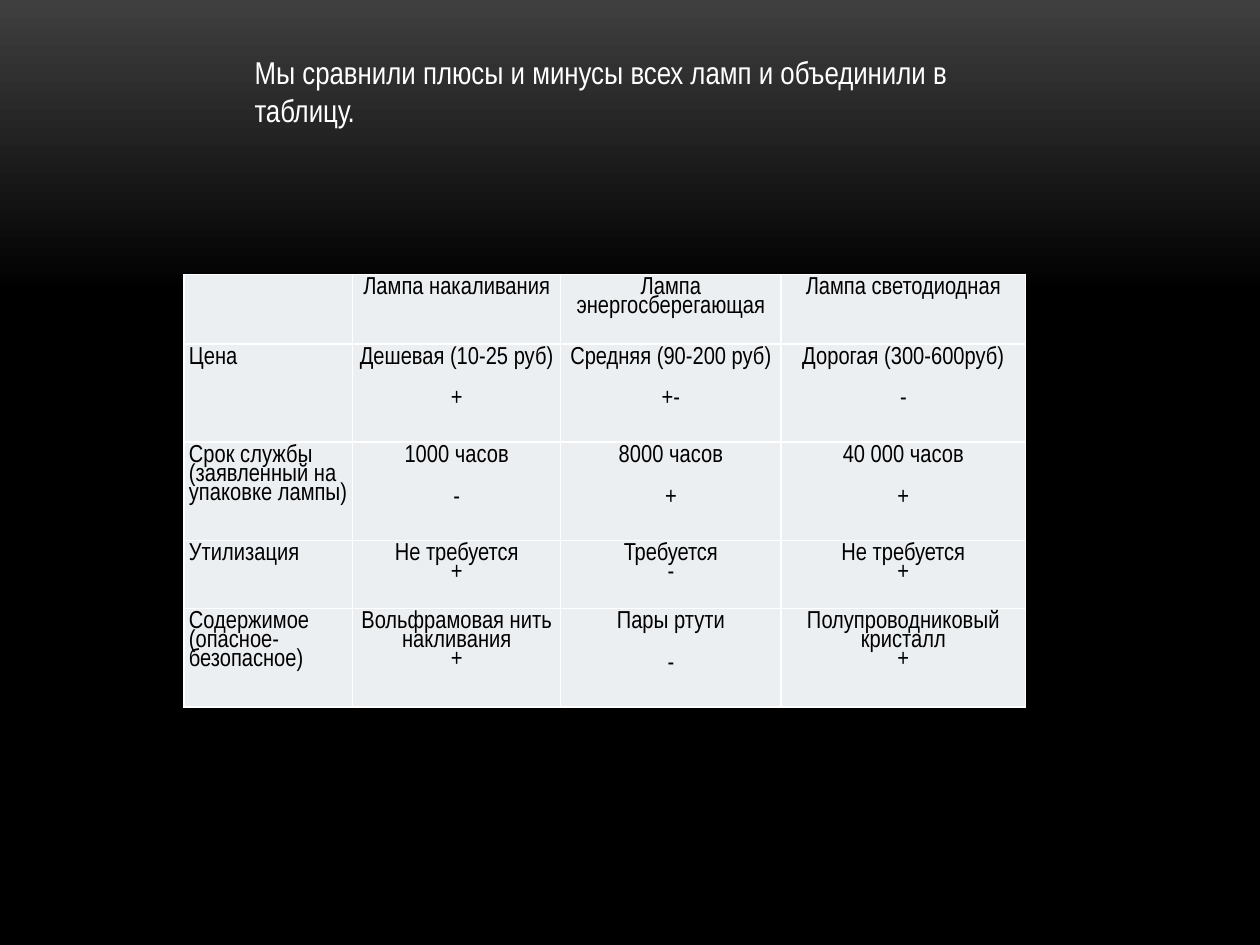
from pptx import Presentation
from pptx import util as u
from pptx.dml.color import RGBColor
from pptx.enum import text
from pptx.oxml import parse_xml
from pptx.oxml.ns import nsdecls

TITLE = "Мы сравнили плюсы и минусы всех ламп и объединили в таблицу."
HEADS = ["", "Лампа накаливания", "Лампа энергосберегающая", "Лампа светодиодная"]
ROWS = [
    (["Цена"], ["Дешевая (10-25 руб)", "+"],
     ["Средняя (90-200 руб)", "+-"], ["Дорогая (300-600руб)", "-"]),
    (["Срок службы", "(заявленный на упаковке лампы)"], ["1000 часов", "-"],
     ["8000 часов", "+"], ["40 000 часов", "+"]),
    (["Утилизация"], ["Не требуется", "+"],
     ["Требуется", "-"], ["Не требуется", "+"]),
    (["Содержимое", "(опасное-безопасное)"], ["Вольфрамовая нить накливания", "+"],
     ["Пары ртути", "-"], ["Полупроводниковый кристалл", "+"]),
]
GAPS = {(1, 1), (1, 2), (1, 3), (2, 1), (2, 2), (2, 3), (4, 2)}
WIDTHS = [1.34, 1.65, 1.75, 1.94]
HEIGHTS = [0.55, 0.78, 0.78, 0.54, 0.78]
THEME = {
    "font": "Arial Narrow", "title": 18, "cell": 14, "lead": 0.82, "gap": 13,
    "white": "FFFFFF", "black": "000000", "grey": "3F3F3F", "fill": "ECEFF1",
}


def tint(name):
    return RGBColor.from_string(THEME[name])


def style(para, size, color, **form):
    for key, val in form.items():
        setattr(para, key, val)
    for key, val in {"name": THEME["font"], "size": u.Pt(THEME[size])}.items():
        setattr(para.font, key, val)
    para.font.color.rgb = tint(color)


def border(cell):
    props = cell._tc.get_or_add_tcPr()
    for spot, side in enumerate(("lnL", "lnR", "lnT", "lnB")):
        props.insert(spot, parse_xml(
            f'<a:{side} {nsdecls("a")} w="12700"><a:solidFill>'
            f'<a:srgbClr val="{THEME["white"]}"/></a:solidFill></a:{side}>'))


def write(cell, lines, align, gap):
    for side in ("left", "right", "top", "bottom"):
        setattr(cell, f"margin_{side}", u.Inches(0.04))
    cell.fill.solid()
    cell.fill.fore_color.rgb = tint("fill")
    border(cell)
    frame = cell.text_frame
    frame.text = "\n".join(lines)
    for n, para in enumerate(frame.paragraphs):
        style(para, "cell", "black", alignment=align, line_spacing=THEME["lead"],
              space_before=u.Pt(THEME["gap"] if gap and n else 0))


def main():
    deck = Presentation()
    deck.slide_width, deck.slide_height = u.Inches(10), u.Inches(7.5)
    slide = deck.slides.add_slide(deck.slide_layouts[5])

    back = slide.background.fill
    back.gradient()
    back.gradient_angle = 270
    for stop, (pos, color) in zip(back.gradient_stops, [(0, "grey"), (0.31, "black")]):
        stop.position = pos
        stop.color.rgb = tint(color)

    title = slide.shapes.title
    box = {"left": 1.92, "top": 0.37, "width": 6.14, "height": 0.71}
    for key, val in box.items():
        setattr(title, key, u.Inches(val))
    frame = title.text_frame
    frame.text = TITLE
    form = {"word_wrap": True, "vertical_anchor": text.MSO_ANCHOR.TOP,
            "auto_size": text.MSO_AUTO_SIZE.NONE}
    for key, val in form.items():
        setattr(frame, key, val)
    style(frame.paragraphs[0], "title", "white", alignment=text.PP_ALIGN.LEFT)

    grid = [[[head] for head in HEADS], *ROWS]
    table = slide.shapes.add_table(
        len(grid), len(HEADS), u.Inches(1.46), u.Inches(2.18),
        u.Inches(sum(WIDTHS)), u.Inches(sum(HEIGHTS))).table
    table.first_row = table.horz_banding = False
    for col, width in zip(table.columns, WIDTHS):
        col.width = u.Inches(width)
    for row, height in zip(table.rows, HEIGHTS):
        row.height = u.Inches(height)
    for r, cells in enumerate(grid):
        for c, lines in enumerate(cells):
            align = text.PP_ALIGN.CENTER if c else text.PP_ALIGN.LEFT
            write(table.cell(r, c), lines, align, (r, c) in GAPS)

    deck.save("out.pptx")


if __name__ == "__main__":
    main()
